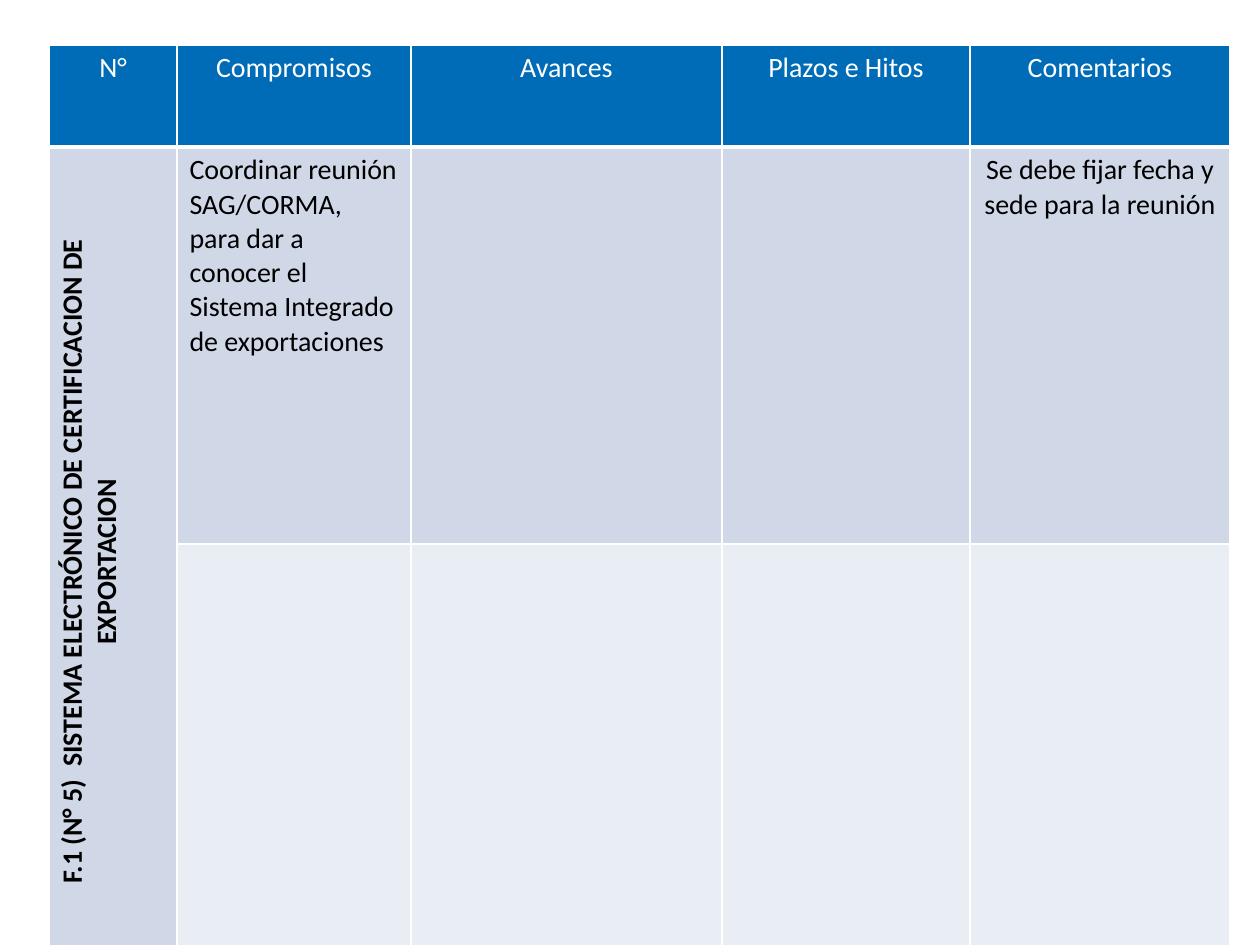
from dataclasses import dataclass

from lxml import etree
from pptx import Presentation
from pptx.dml.color import RGBColor
from pptx.enum.text import PP_ALIGN
from pptx.oxml.ns import qn
from pptx.util import Pt

LEFT, CENTER = PP_ALIGN.LEFT, PP_ALIGN.CENTER
EMU_PER_PX = 914400 / 126
BLANK_LAYOUT = 6


@dataclass(frozen=True)
class Theme:
    font: str = "Calibri"
    text_size: int = 16
    header_fill: str = "006CB7"
    band_fills: tuple = ("D0D8E8", "E9EDF4")
    light: str = "FFFFFF"
    dark: str = "000000"
    thin: int = 1
    thick: int = 3


def px(length):
    return round(length * EMU_PER_PX)


class PageBuilder:
    def __init__(self, page, theme):
        self.page = page
        self.theme = theme

    def table(self, left, top, columns, rows):
        frame = self.page.shapes.add_table(
            len(rows), len(columns), px(left), px(top), px(sum(columns)), px(sum(rows)))
        table = frame.table
        for column, width in zip(table.columns, columns):
            column.width = px(width)
        for row, height in zip(table.rows, rows):
            row.height = px(height)
        return table

    def style_cell(self, cell, fill, bottom):
        cell.fill.solid()
        cell.fill.fore_color.rgb = RGBColor.from_string(fill)
        properties = cell._tc.get_or_add_tcPr()
        thin = self.theme.thin
        # Cell borders come before the fill in the schema
        edges = (("a:lnL", thin), ("a:lnR", thin), ("a:lnT", thin), ("a:lnB", bottom))
        for index, (tag, width) in enumerate(edges):
            line = etree.Element(qn(tag), w=str(Pt(width)))
            solid = etree.SubElement(line, qn("a:solidFill"))
            etree.SubElement(solid, qn("a:srgbClr"), val=self.theme.light)
            properties.insert(index, line)

    def write_cell(self, cell, text, color, align=CENTER, bold=False):
        para = cell.text_frame.paragraphs[0]
        para.text = text
        para.alignment = align
        para.font.name = self.theme.font
        para.font.size = Pt(self.theme.text_size)
        para.font.bold = bold
        para.font.color.rgb = RGBColor.from_string(color)


def main():
    theme = Theme()
    deck = Presentation()
    deck.slide_width, deck.slide_height = px(1260), px(945)
    page = deck.slides.add_slide(deck.slide_layouts[BLANK_LAYOUT])
    builder = PageBuilder(page, theme)

    # Grid: one header row and two banded rows
    table = builder.table(49, 45, (128, 234, 311, 248, 260), (102, 397, 345))
    topic = table.cell(1, 0)
    topic.merge(table.cell(2, 0))
    fills = (theme.header_fill, *theme.band_fills)
    for row_index, (row, fill) in enumerate(zip(table.rows, fills)):
        bottom = theme.thick if row_index == 0 else theme.thin
        for cell in row.cells:
            builder.style_cell(cell, fill, bottom)

    # Header
    headings = ("N°", "Compromisos", "Avances", "Plazos e Hitos", "Comentarios")
    for cell, heading in zip(table.rows[0].cells, headings):
        builder.write_cell(cell, heading, theme.light)

    # Topic, read from bottom to top
    builder.write_cell(
        topic, "F.1 (N° 5)  SISTEMA ELECTRÓNICO DE CERTIFICACION DE EXPORTACION",
        theme.dark, bold=True)
    topic._tc.get_or_add_tcPr().set("vert", "vert270")

    # Commitment and comment
    builder.write_cell(
        table.cell(1, 1),
        "Coordinar reunión SAG/CORMA, para dar a conocer el Sistema Integrado de exportaciones",
        theme.dark, LEFT)
    builder.write_cell(
        table.cell(1, 4), "Se debe fijar fecha y sede para la reunión", theme.dark)

    deck.save("out.pptx")


if __name__ == "__main__":
    main()
